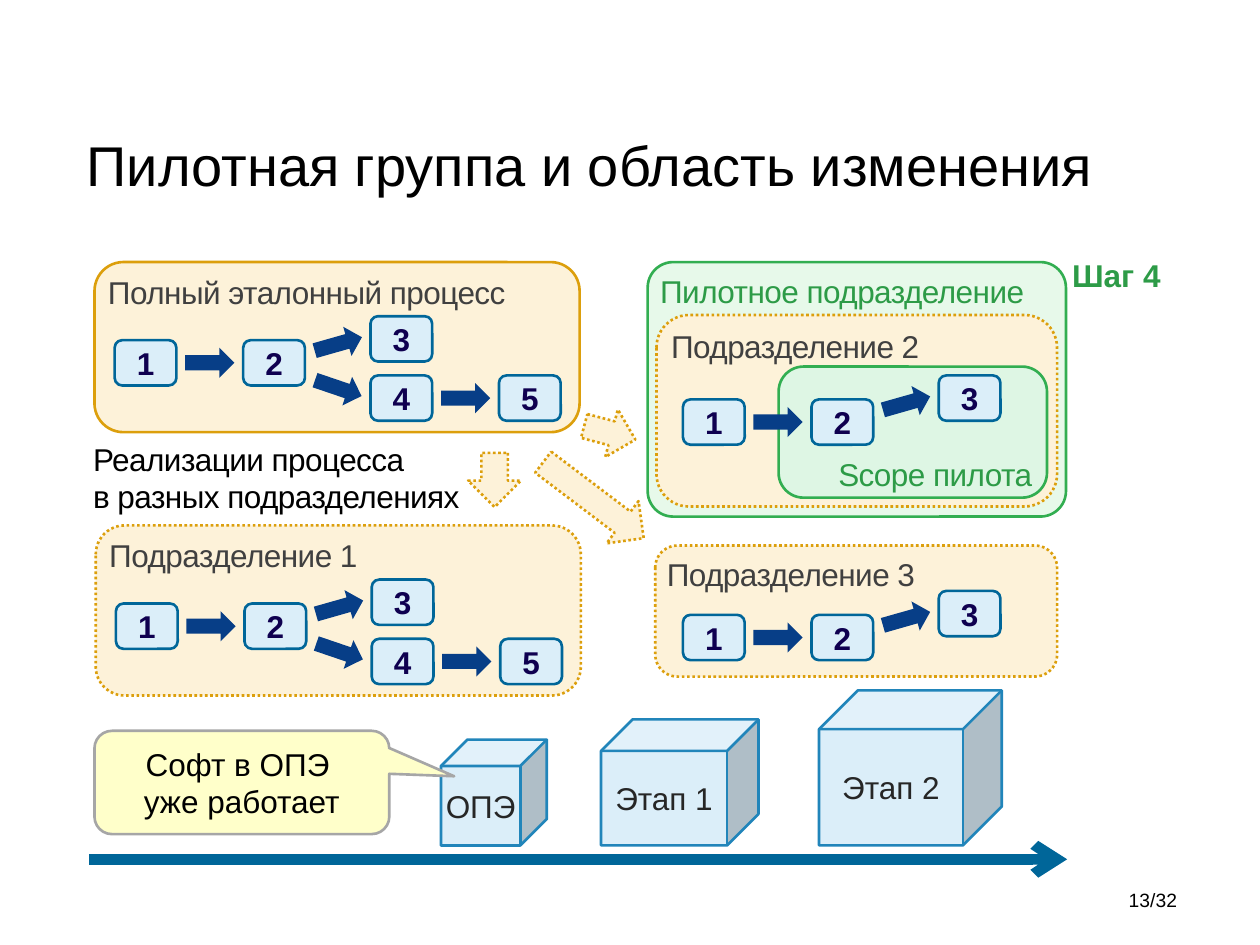
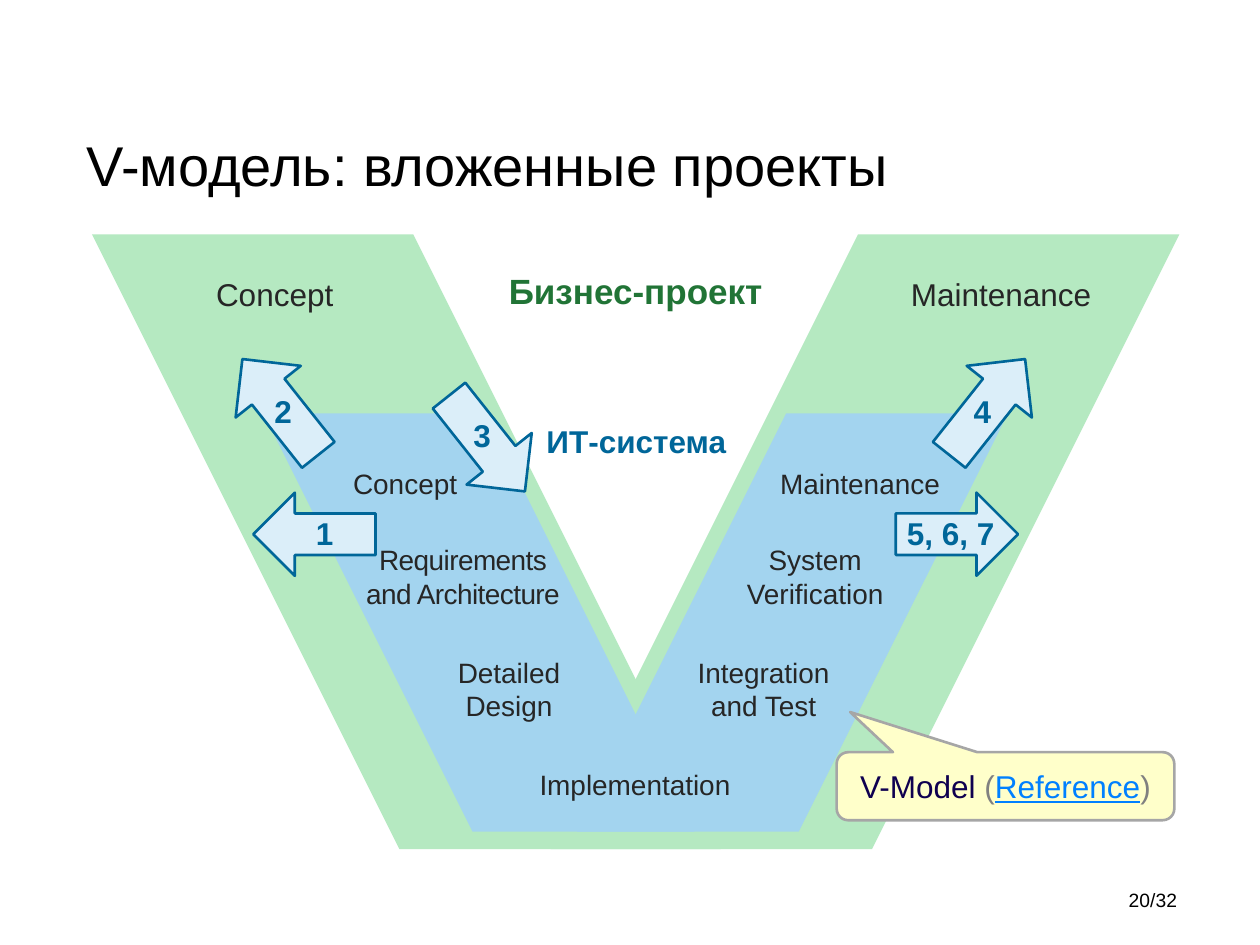
from lxml.etree import SubElement
from pptx import Presentation
from pptx.dml.color import RGBColor
from pptx.enum.dml import MSO_LINE
from pptx.enum.shapes import MSO_CONNECTOR, MSO_SHAPE
from pptx.enum.text import MSO_ANCHOR, PP_ALIGN
from pptx.oxml.ns import qn
from pptx.util import Inches, Pt

FONT = "Arial"
TOTAL_SLIDES = 32
TIGHT = -30
PANEL_MARGINS = (0.04, 0.02)
TEXT_MARGINS = (0.1, 0.05)

BLACK = RGBColor(0x00, 0x00, 0x00)
DARK_GREY = RGBColor(0x26, 0x26, 0x26)
PANEL_GREY = RGBColor(0x40, 0x40, 0x40)
MID_GREY = RGBColor(0x80, 0x80, 0x80)
CALLOUT_GREY = RGBColor(0xA6, 0xA6, 0xA6)
CALLOUT_YELLOW = RGBColor(0xFF, 0xFF, 0xCA)
LINK_BLUE = RGBColor(0x00, 0x80, 0xFF)
TEAL = RGBColor(0x00, 0x66, 0x99)
PALE_BLUE = RGBColor(0xDB, 0xEE, 0xF9)
CUBE_BLUE = RGBColor(0x21, 0x85, 0xBA)
ARROW_BLUE = RGBColor(0x07, 0x3E, 0x87)
INDIGO = RGBColor(0x0F, 0x00, 0x50)
CREAM = RGBColor(0xFD, 0xF2, 0xD9)
AMBER = RGBColor(0xDC, 0x9F, 0x0C)
PILOT_FILL = RGBColor(0xE7, 0xF9, 0xEA)
SCOPE_FILL = RGBColor(0xDE, 0xF6, 0xE4)
GREEN_LINE = RGBColor(0x32, 0xAE, 0x51)
GREEN_TEXT = RGBColor(0x2D, 0x9B, 0x47)
DARK_GREEN = RGBColor(0x21, 0x74, 0x36)
V_GREEN = RGBColor(0xB5, 0xE9, 0xC1)
V_BLUE = RGBColor(0xA3, 0xD4, 0xEF)


def format_run(run, color, size=18, bold=False, spacing=None):
    run.font.name = FONT
    run.font.size = Pt(size)
    run.font.bold = bold
    run.font.color.rgb = color
    if spacing is not None:
        run.font._element.set("spc", str(spacing))


def set_text(shape, text, color, align=PP_ALIGN.LEFT, anchor=MSO_ANCHOR.TOP,
             margins=TEXT_MARGINS, **run_format):
    """Fill the shape with one paragraph; "\\v" in the text breaks the line."""
    frame = shape.text_frame
    frame.word_wrap = True
    frame.vertical_anchor = anchor
    frame.margin_left = frame.margin_right = Inches(margins[0])
    frame.margin_top = frame.margin_bottom = Inches(margins[1])
    paragraph = frame.paragraphs[0]
    paragraph.text = text
    paragraph.alignment = align
    for run in paragraph.runs:
        format_run(run, color, **run_format)


def add_label(container, box, text, color, **text_format):
    label = container.shapes.add_textbox(*map(Inches, box))
    set_text(label, text, color, **text_format)


def add_block(container, preset, box, fill, line=None, dotted=False,
              rotation=0, adjustments=()):
    block = container.shapes.add_shape(preset, *map(Inches, box))
    block.shadow.inherit = False
    block.rotation = rotation
    block.fill.solid()
    block.fill.fore_color.rgb = fill
    if line is None:
        block.line.fill.background()
    else:
        block.line.color.rgb = line
        block.line.width = Pt(1.5)
        if dotted:
            block.line.dash_style = MSO_LINE.ROUND_DOT
    for index, value in enumerate(adjustments):
        block.adjustments[index] = value
    return block


def add_callout(slide, box, text, pointer):
    callout = add_block(slide, MSO_SHAPE.ROUNDED_RECTANGULAR_CALLOUT, box,
                        CALLOUT_YELLOW, CALLOUT_GREY, adjustments=(*pointer, 0.17))
    set_text(callout, text, BLACK, align=PP_ALIGN.CENTER,
             anchor=MSO_ANCHOR.MIDDLE, margins=PANEL_MARGINS)
    return callout


def add_titled_slide(presentation, title, number):
    slide = presentation.slides.add_slide(presentation.slide_layouts[6])
    add_label(slide, (0.59, 0.99, 8.58, 0.82), title, BLACK, size=32)
    add_label(slide, (8.65, 6.97, 0.79, 0.34), f"{number}/{TOTAL_SLIDES}", BLACK,
              size=11, align=PP_ALIGN.RIGHT, anchor=MSO_ANCHOR.MIDDLE)
    return slide


def add_panel(slide, box, title, fill=CREAM, line=AMBER, color=PANEL_GREY,
              dotted=True, corner=0.17):
    panel = add_block(slide, MSO_SHAPE.ROUNDED_RECTANGLE, box, fill, line, dotted,
                      adjustments=(corner,))
    set_text(panel, title, color, margins=PANEL_MARGINS, spacing=TIGHT)


def add_process(slide, left, top, full):
    """Draw the numbered steps; the short process ends with step 3."""
    columns = (0, 1.02, 2.03, 3.05)
    upper, middle, lower = 0, 0.19, 0.47
    steps = [(0, middle), (1, middle), (2, upper)]
    arrows = [(0, 0.25, 0), (1, 0.1, 344.1)]
    if full:
        steps += [(2, lower), (3, lower)]
        arrows += [(1, 0.45, 18.8), (2, 0.53, 0)]
    group = slide.shapes.add_group_shape()
    for column, offset, rotation in arrows:
        box = (left + columns[column] + 0.56, top + offset, 0.39, 0.24)
        add_block(group, MSO_SHAPE.RIGHT_ARROW, box, ARROW_BLUE, rotation=rotation)
    for number, (column, offset) in enumerate(steps, 1):
        box = (left + columns[column], top + offset, 0.49, 0.36)
        step = add_block(group, MSO_SHAPE.ROUNDED_RECTANGLE, box, PALE_BLUE, TEAL)
        set_text(step, str(number), INDIGO, bold=True, align=PP_ALIGN.CENTER,
                 anchor=MSO_ANCHOR.MIDDLE, margins=PANEL_MARGINS)


def add_full_department(slide, left, top, title, dotted):
    add_panel(slide, (left, top, 3.85, 1.35), title, dotted=dotted)
    add_process(slide, left + 0.16, top + 0.43, full=True)


def add_pilot_department(slide, left, top):
    add_panel(slide, (left, top, 3.32, 2.02), "Пилотное подразделение", PILOT_FILL,
              GREEN_LINE, GREEN_TEXT, dotted=False, corner=0.1)
    add_panel(slide, (left + 0.07, top + 0.42, 3.18, 1.52), "Подразделение 2")
    add_block(slide, MSO_SHAPE.ROUNDED_RECTANGLE, (left + 1.04, top + 0.83, 2.13, 1.04),
              SCOPE_FILL, GREEN_LINE, adjustments=(0.19,))
    add_process(slide, left + 0.28, top + 0.9, full=False)
    add_label(slide, (left + 1.18, top + 1.48, 1.97, 0.4), "Scope пилота", GREEN_TEXT,
              align=PP_ALIGN.RIGHT, spacing=TIGHT)
    add_label(slide, (left + 3.27, top - 0.1, 1.02, 0.4), "Шаг 4", GREEN_TEXT, bold=True)


def add_short_department(slide, left, top):
    add_panel(slide, (left, top, 3.19, 1.04), "Подразделение 3")
    add_process(slide, left + 0.22, top + 0.36, full=False)


def add_rollout_arrows(slide, left, top):
    for x, y, width, height, rotation in ((0, 0.36, 0.43, 0.42, 90),
                                          (0.5, 0.52, 1, 0.42, 37.1),
                                          (0.92, 0, 0.42, 0.39, 14.9)):
        add_block(slide, MSO_SHAPE.RIGHT_ARROW, (left + x, top + y, width, height),
                  CREAM, AMBER, dotted=True, rotation=rotation)


def add_stage_timeline(slide, left, axis_top, length):
    axis = slide.shapes.add_connector(
        MSO_CONNECTOR.STRAIGHT, Inches(left), Inches(axis_top),
        Inches(left + length), Inches(axis_top))
    axis.line.color.rgb = TEAL
    axis.line.width = Pt(6)
    SubElement(axis.line._get_or_add_ln(), qn("a:tailEnd"), type="arrow")
    SubElement(axis._element.spPr, qn("a:effectLst"))
    base = axis_top - 0.11
    for name, x, width, height in (("ОПЭ", 2.79, 0.84, 0.84),
                                   ("Этап 1", 4.06, 1.25, 1),
                                   ("Этап 2", 5.79, 1.45, 1.23)):
        cube = add_block(slide, MSO_SHAPE.CUBE, (left + x, base - height, width, height),
                         PALE_BLUE, CUBE_BLUE)
        set_text(cube, name, DARK_GREY, align=PP_ALIGN.CENTER,
                 anchor=MSO_ANCHOR.MIDDLE, margins=(0, 0.05))
    add_callout(slide, (left + 0.04, axis_top - 1.02, 2.34, 0.82),
                "Софт в ОПЭ \vуже работает", pointer=(0.72, -0.06))


def build_pilot_slide(presentation):
    slide = add_titled_slide(presentation, "Пилотная группа и область изменения", 13)
    add_stage_timeline(slide, 0.71, 6.82, 7.76)
    add_pilot_department(slide, 5.14, 2.08)
    add_full_department(slide, 0.75, 2.08, "Полный эталонный процесс", dotted=False)
    add_full_department(slide, 0.76, 4.17, "Подразделение 1", dotted=True)
    add_rollout_arrows(slide, 3.71, 3.24)
    add_short_department(slide, 5.2, 4.33)
    add_label(slide, (0.64, 3.44, 3.39, 0.71),
              "Реализации процесса \vв разных подразделениях", BLACK, spacing=TIGHT)


def add_v_shape(slide, box, arm_width, fill):
    left, top, width, height = box
    group = slide.shapes.add_group_shape()
    for arm_left, mirrored in ((left, True), (left + width - arm_width, False)):
        arm = add_block(group, MSO_SHAPE.PARALLELOGRAM,
                        (arm_left, top, arm_width, height), fill, adjustments=(0.5,))
        if mirrored:
            arm._element.spPr.find(qn("a:xfrm")).set("flipH", "1")


def add_v_labels(slide, left, top):
    centered = {"align": PP_ALIGN.CENTER}
    for x, y, width, text, size, color, bold in (
            (0.76, 0.27, 1.38, "Concept", 18, DARK_GREY, False),
            (6.26, 0.27, 1.91, "Maintenance", 18, DARK_GREY, False),
            (3.19, 0.23, 2.25, "Бизнес-проект", 20, DARK_GREEN, True),
            (3.36, 1.44, 1.92, "ИТ-система", 18, TEAL, True),
            (1.96, 1.79, 1.05, "Concept", 16, DARK_GREY, False),
            (5.34, 1.79, 1.51, "Maintenance", 16, DARK_GREY, False),
            (5.08, 2.4, 1.32, "System\vVerification", 16, DARK_GREY, False),
            (2.79, 3.29, 1.04, "Detailed\vDesign", 16, DARK_GREY, False),
            (4.69, 3.29, 1.28, "Integration\vand Test", 16, DARK_GREY, False),
            (3.43, 4.18, 1.76, "Implementation", 16, DARK_GREY, False)):
        height = 0.65 if "\v" in text else 0.4
        add_label(slide, (left + x, top + y, width, height), text, color,
                  size=size, bold=bold, **centered)
    add_label(slide, (left + 2.02, top + 2.4, 1.85, 0.65),
              "Requirements\vand Architecture", DARK_GREY, size=16, spacing=TIGHT,
              **centered)


def add_numbered_arrows(slide, left, top):
    for text, x, y, rotation, label_x, label_y, label_width in (
            ("2", 1.01, 1.04, 231.6, 1.35, 1.2, 0.4),
            ("1", 1.28, 2.05, 180, 1.68, 2.17, 0.4),
            ("5, 6, 7", 6.38, 2.05, 0, 6.37, 2.17, 1.03),
            ("4", 6.62, 1.04, 308.4, 6.9, 1.2, 0.4),
            ("3", 2.65, 1.33, 51.6, 2.93, 1.39, 0.4)):
        add_block(slide, MSO_SHAPE.RIGHT_ARROW, (left + x, top + y, 0.97, 0.66),
                  PALE_BLUE, TEAL, rotation=rotation)
        add_label(slide, (left + label_x, top + label_y, label_width, 0.41), text,
                  TEAL, bold=True)


def add_source_callout(slide, box):
    callout = add_callout(slide, box, "V-Model", pointer=(-0.46, -1.09))
    paragraph = callout.text_frame.paragraphs[0]
    paragraph.runs[0].font.color.rgb = INDIGO
    for text, color, underline in ((" (", MID_GREY, False),
                                   ("Reference", LINK_BLUE, True),
                                   (")", MID_GREY, False)):
        run = paragraph.add_run()
        run.text = text
        format_run(run, color)
        run.font.underline = underline


def build_v_model_slide(presentation):
    slide = add_titled_slide(presentation, "V-модель: вложенные проекты", 20)
    left, top = 0.73, 1.86
    add_v_shape(slide, (left, top, 8.63, 4.88), 4.99, V_GREEN)
    add_v_shape(slide, (left + 1.36, top + 1.42, 5.91, 3.32), 3.42, V_BLUE)
    add_v_labels(slide, left, top)
    add_numbered_arrows(slide, left, top)
    add_source_callout(slide, (6.64, 5.97, 2.68, 0.54))


def main():
    presentation = Presentation()
    presentation.slide_width = Inches(10)
    presentation.slide_height = Inches(7.5)
    build_pilot_slide(presentation)
    build_v_model_slide(presentation)
    presentation.save("out.pptx")


if __name__ == "__main__":
    main()
